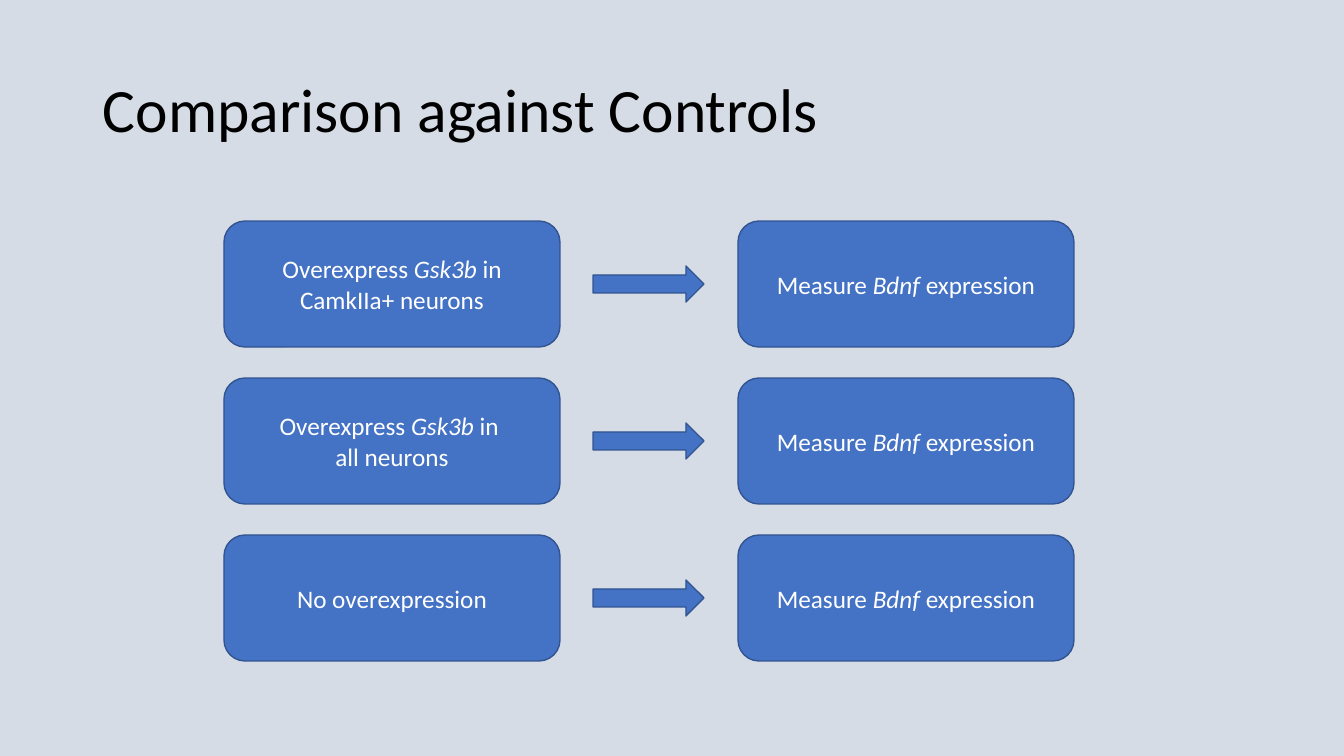
from pptx import Presentation
from pptx.dml.color import RGBColor
from pptx.enum.shapes import MSO_SHAPE as Shape
from pptx.enum.text import MSO_ANCHOR as Anchor, PP_ALIGN as Align
from pptx.util import Emu, Pt

SLIDE_WIDTH, SLIDE_HEIGHT = 1344, 756
EMU_PER_PX = 12192000 / SLIDE_WIDTH
FONT = "Calibri"
COLORS = {
    "background": "D6DCE5",
    "title": "000000",
    "fill": "4472C4",
    "outline": "325491",
    "label": "FFFFFF",
}
BOX_WIDTH, BOX_HEIGHT = 336, 126
ROW_PITCH = 157
ARROW_WIDTH, ARROW_HEIGHT = 111, 36
ARROW_GAP = 33
GENES = ("Gsk3b", "Bdnf")
MEASUREMENT = [["Measure ", "Bdnf", " expression"]]
CONDITIONS = [
    [["Overexpress ", "Gsk3b", " in CamkIIa+ neurons"]],
    [["Overexpress ", "Gsk3b", " in "], ["all neurons"]],
    [["No overexpression"]],
]


def px(*lengths):
    return [Emu(round(length * EMU_PER_PX)) for length in lengths]


def color(name):
    return RGBColor.from_string(COLORS[name])


def style_font(font, size, color_name):
    font.name = FONT
    font.size = Pt(size)
    font.color.rgb = color(color_name)


def add_filled_shape(slide, kind, box, fill, outline=None):
    shape = slide.shapes.add_shape(kind, *px(*box))
    shape.shadow.inherit = False
    shape.fill.solid()
    shape.fill.fore_color.rgb = color(fill)
    if outline:
        shape.line.color.rgb = color(outline)
        shape.line.width = Pt(1)
    else:
        shape.line.fill.background()
    return shape


def add_title(slide, box, text):
    frame = slide.shapes.add_textbox(*px(*box)).text_frame
    frame.word_wrap = True
    frame.vertical_anchor = Anchor.MIDDLE
    paragraph = frame.paragraphs[0]
    paragraph.text = text
    paragraph.line_spacing = 0.9
    style_font(paragraph.font, 44, "title")


def add_step(slide, left, top, lines):
    box = (left, top, BOX_WIDTH, BOX_HEIGHT)
    frame = add_filled_shape(slide, Shape.ROUNDED_RECTANGLE, box, "fill", "outline").text_frame
    frame.word_wrap = True
    frame.vertical_anchor = Anchor.MIDDLE
    for index, pieces in enumerate(lines):
        paragraph = frame.add_paragraph() if index else frame.paragraphs[0]
        paragraph.alignment = Align.CENTER
        style_font(paragraph.font, 18, "label")
        for piece in pieces:
            run = paragraph.add_run()
            run.text = piece
            if piece in GENES:
                run.font.italic = True


def add_comparison(slide, box):
    left, top, width = box
    for row, condition in enumerate(CONDITIONS):
        row_top = top + row * ROW_PITCH
        add_step(slide, left, row_top, condition)
        add_step(slide, left + width - BOX_WIDTH, row_top, MEASUREMENT)
        arrow_left = left + BOX_WIDTH + ARROW_GAP
        arrow_top = row_top + (BOX_HEIGHT - ARROW_HEIGHT) // 2
        arrow_box = (arrow_left, arrow_top, ARROW_WIDTH, ARROW_HEIGHT)
        add_filled_shape(slide, Shape.RIGHT_ARROW, arrow_box, "fill", "outline")


def main():
    presentation = Presentation()
    presentation.slide_width, presentation.slide_height = px(SLIDE_WIDTH, SLIDE_HEIGHT)
    slide = presentation.slides.add_slide(presentation.slide_layouts[6])
    add_filled_shape(slide, Shape.RECTANGLE, (0, 0, SLIDE_WIDTH, SLIDE_HEIGHT), "background")
    add_title(slide, (93, 40, 1159, 146), "Comparison against Controls")
    add_comparison(slide, (224, 221, 850))
    presentation.save("out.pptx")


if __name__ == "__main__":
    main()
